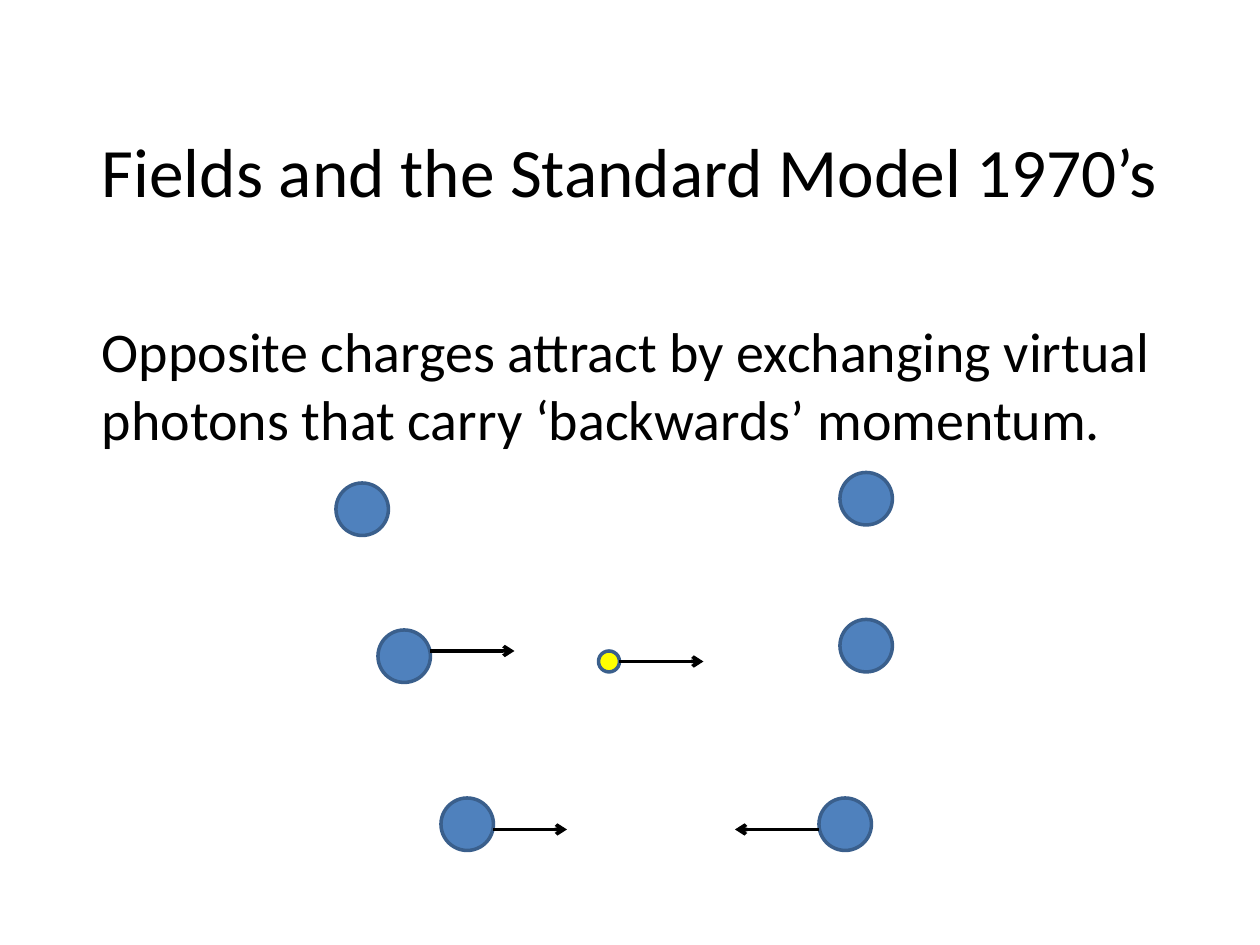
from dataclasses import dataclass

from lxml import etree
from pptx import Presentation
from pptx import util as u
from pptx.dml import color
from pptx.enum import shapes, text
from pptx.oxml import ns

BLACK, CHARGE_FILL, PHOTON_FILL, OUTLINE = "000000", "4F81BD", "FFFF00", "3A5F8C"
CHARGE_SIZE, PHOTON_SIZE = 30, 12
LINE_WIDTH = 2


@dataclass
class Particle:
    left: float
    top: float
    size: float = CHARGE_SIZE
    fill: str = CHARGE_FILL


@dataclass
class Momentum:
    """A horizontal arrow; a negative length points left."""
    start: float
    y: float
    length: float


@dataclass
class Stage:
    particles: list[Particle]
    momenta: list[Momentum]


STAGES = [
    Stage([Particle(480, 354), Particle(216, 360),
           Particle(342, 372, PHOTON_SIZE, PHOTON_FILL)],
          [Momentum(354, 378, 48), Momentum(246, 372, 48)]),
    Stage([Particle(192, 276), Particle(480, 270)], []),
    Stage([Particle(468, 456), Particle(252, 456)],
          [Momentum(468, 474, -48), Momentum(282, 474, 42)]),
]


def rgb(value: str) -> color.RGBColor:
    return color.RGBColor.from_string(value)


def set_line(line, value: str) -> None:
    line.color.rgb = rgb(value)
    line.width = u.Pt(LINE_WIDTH)


def draw_particle(group, particle: Particle) -> None:
    shape = group.shapes.add_shape(
        shapes.MSO_SHAPE.OVAL, u.Pt(particle.left), u.Pt(particle.top),
        u.Pt(particle.size), u.Pt(particle.size))
    shape.shadow.inherit = False
    shape.fill.solid()
    shape.fill.fore_color.rgb = rgb(particle.fill)
    set_line(shape.line, OUTLINE)


def draw_momentum(group, momentum: Momentum) -> None:
    connector = group.shapes.add_connector(
        shapes.MSO_CONNECTOR.STRAIGHT, u.Pt(momentum.start), u.Pt(momentum.y),
        u.Pt(momentum.start + momentum.length), u.Pt(momentum.y))
    set_line(connector.line, BLACK)
    properties = connector._element.spPr
    etree.SubElement(properties.find(ns.qn("a:ln")), ns.qn("a:tailEnd"), type="arrow")
    etree.SubElement(properties, ns.qn("a:effectLst"))


def draw_stage(slide, stage: Stage) -> None:
    group = slide.shapes.add_group_shape()
    for particle in stage.particles:
        draw_particle(group, particle)
    for momentum in stage.momenta:
        draw_momentum(group, momentum)


def write_text(shape, wording: str, size: float, alignment, frame_format: dict) -> None:
    frame = shape.text_frame
    for name, value in frame_format.items():
        setattr(frame, name, value)
    paragraph = frame.paragraphs[0]
    paragraph.alignment = alignment
    run = paragraph.add_run()
    run.text = wording
    for name, value in {"name": "Calibri", "size": u.Pt(size)}.items():
        setattr(run.font, name, value)
    run.font.color.rgb = rgb(BLACK)


def main() -> None:
    presentation = Presentation()
    presentation.slide_width, presentation.slide_height = u.Pt(720), u.Pt(540)
    slide = presentation.slides.add_slide(presentation.slide_layouts[5])

    title = slide.shapes.title
    for name, value in {"left": 36, "top": 48, "width": 648, "height": 98.6}.items():
        setattr(title, name, u.Pt(value))
    common = {"word_wrap": True, "auto_size": text.MSO_AUTO_SIZE.NONE}
    write_text(title, "Fields and the Standard Model 1970’s", 39.6,
               text.PP_ALIGN.CENTER,
               {**common, "vertical_anchor": text.MSO_ANCHOR.MIDDLE})

    explanation = slide.shapes.add_textbox(u.Pt(24), u.Pt(177.5), u.Pt(678), u.Pt(110.5))
    write_text(explanation,
               "Opposite charges attract by exchanging virtual photons "
               "that carry ‘backwards’ momentum.", 32, text.PP_ALIGN.LEFT,
               {**common, "vertical_anchor": text.MSO_ANCHOR.TOP,
                "margin_left": u.Pt(34.2)})

    for stage in STAGES:
        draw_stage(slide, stage)
    presentation.save("out.pptx")


if __name__ == "__main__":
    main()
